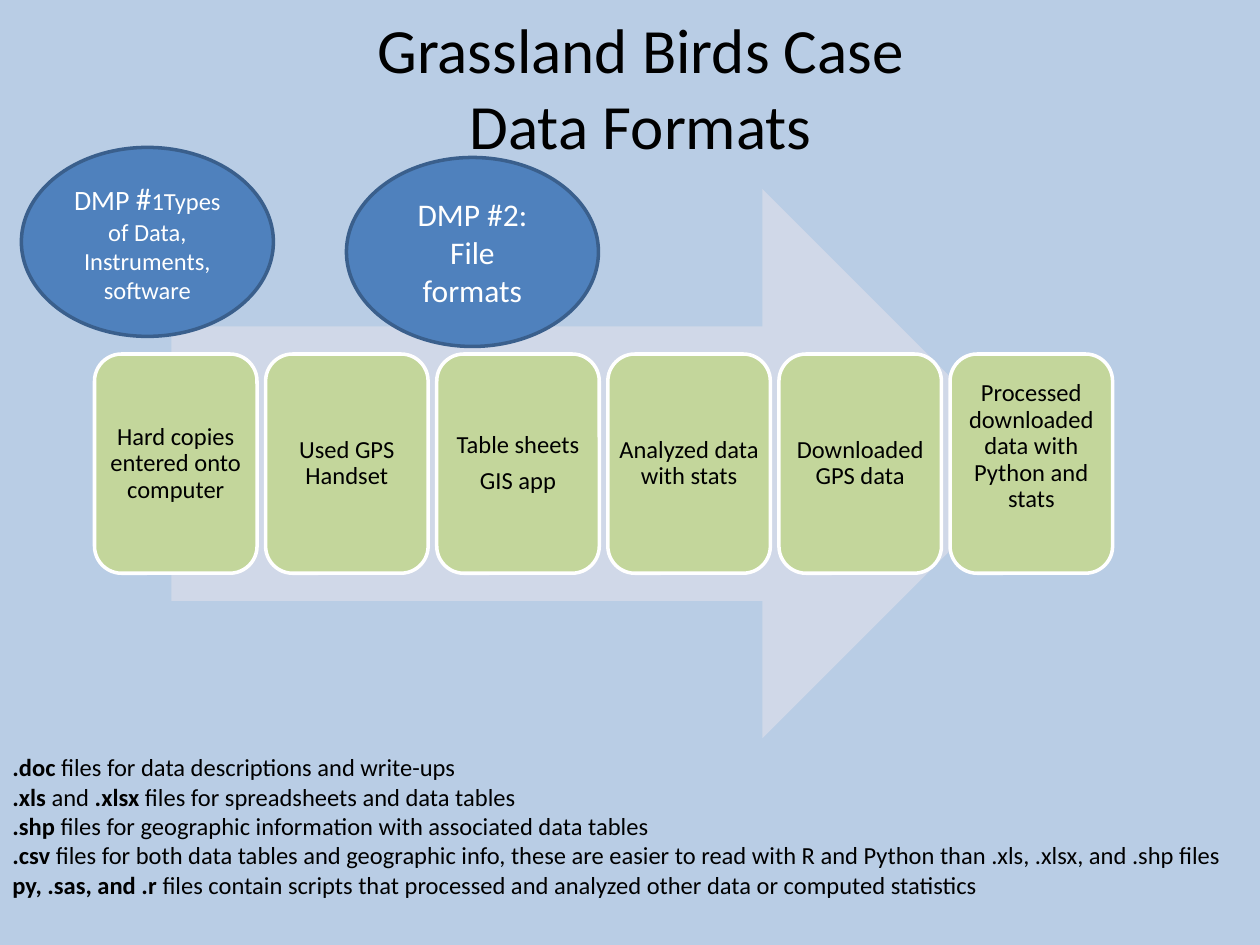
import pptx
from pptx.dml.color import RGBColor
from pptx.enum.shapes import MSO_SHAPE
from pptx.enum.text import MSO_ANCHOR, MSO_AUTO_SIZE, PP_ALIGN
from pptx.util import Inches, Pt

BACKGROUND = RGBColor(0xB9, 0xCD, 0xE5)
ARROW = RGBColor(0xD0, 0xD8, 0xE8)
GREEN = RGBColor(0xC3, 0xD6, 0x9B)
BLUE = RGBColor(0x4F, 0x81, 0xBD)
BLUE_EDGE = RGBColor(0x3A, 0x5F, 0x8C)
WHITE = RGBColor(0xFF, 0xFF, 0xFF)
BLACK = RGBColor(0, 0, 0)
FONT = "Calibri"

TITLE = "Grassland Birds Case\vData Formats"
STEPS = [
    ["Hard copies entered onto computer"],
    ["Used GPS Handset"],
    ["Table sheets", "GIS app"],
    ["Analyzed data with stats"],
    ["Downloaded GPS data"],
    ["Processed downloaded data with Python and stats"],
]
# Each paragraph is a list of (text, size, bold) runs.
FILES = [
    [(".doc ", 14, True), ("files for data descriptions and write-ups", 14, False)],
    [(".xls ", 14, True), ("and ", 14, False), (".xlsx ", 14, True),
     ("files for spreadsheets and data tables", 14, False)],
    [(".shp ", 14, True),
     ("files for geographic information with associated data tables", 14, False)],
    [(".csv ", 14, True),
     ("files for both data tables and geographic info, these are easier to read "
      "with R and Python than .xls, .xlsx, and .shp files", 14, False)],
    [("py, .sas, and .r ", 14, True),
     ("files contain scripts that processed and analyzed other data or computed "
      "statistics", 14, False)],
]
# (left, top, paragraphs)
PLAN_ITEMS = [
    (2.75, 1.25, [[("DMP #2:", 18, False)], [("File\vformats", 18, False)]]),
    (0.17, 1.17, [[("DMP ", 16, False), ("#", 18, False), ("1Types of Data,", 14, False)],
                  [("Instruments, software", 14, False)]]),
]
STEP_LEFT, STEP_RIGHT, STEP_TOP, STEP_W, STEP_H = 0.75, 8.83, 2.81, 1.29, 1.74
STEP_PITCH = (STEP_RIGHT - STEP_LEFT - STEP_W) / (len(STEPS) - 1)


def style(r, size, color, bold=False):
    r.font.name = FONT
    r.font.size = Pt(size)
    r.font.bold = bold
    r.font.color.rgb = color


def write(tf, paragraphs, color, align):
    tf.word_wrap = True
    for i, runs in enumerate(paragraphs):
        p = tf.paragraphs[0] if i == 0 else tf.add_paragraph()
        p.alignment = align
        for text, size, bold in runs:
            start = len(p.runs)
            for j, line in enumerate(text.split("\v")):
                if j:
                    p.add_line_break()
                p.add_run().text = line
            for r in p.runs[start:]:
                style(r, size, color, bold)


def add_shape(s, kind, left, top, width, height, fill, line=None):
    sp = s.shapes.add_shape(kind, Inches(left), Inches(top), Inches(width), Inches(height))
    sp.shadow.inherit = False
    sp.fill.solid()
    sp.fill.fore_color.rgb = fill
    if line is None:
        sp.line.fill.background()
    else:
        sp.line.color.rgb = line
        sp.line.width = Pt(2)
    sp.text_frame.vertical_anchor = MSO_ANCHOR.MIDDLE
    return sp


def add_step(s, index, texts):
    sp = add_shape(s, MSO_SHAPE.ROUNDED_RECTANGLE, STEP_LEFT + index * STEP_PITCH,
                   STEP_TOP, STEP_W, STEP_H, GREEN, WHITE)
    tf = sp.text_frame
    write(tf, [[(text, 14, False)] for text in texts], BLACK, PP_ALIGN.CENTER)
    # The rounded corners already inset the text by about 0.06 inches.
    tf.margin_left = tf.margin_right = tf.margin_top = tf.margin_bottom = 0
    if index == len(STEPS) - 1:
        tf.margin_bottom = Inches(0.27)
    for p in tf.paragraphs:
        p.line_spacing = 0.9
        p.space_after = Pt(5)


def main():
    prs = pptx.Presentation()
    prs.slide_width, prs.slide_height = Inches(10), Inches(7.5)
    s = prs.slides.add_slide(prs.slide_layouts[5])
    s.background.fill.solid()
    s.background.fill.fore_color.rgb = BACKGROUND

    title = s.shapes.title
    title.left, title.top = Inches(0.17), Inches(0.25)
    title.width, title.height = Inches(9.83), Inches(0.87)
    tf = title.text_frame
    tf.text = TITLE
    tf.auto_size = MSO_AUTO_SIZE.NONE
    tf.vertical_anchor = MSO_ANCHOR.MIDDLE
    tf.paragraphs[0].alignment = PP_ALIGN.CENTER
    for r in tf.paragraphs[0].runs:
        style(r, 36, BLACK)

    add_shape(s, MSO_SHAPE.RIGHT_ARROW, 1.36, 1.5, 6.87, 4.36, ARROW)
    for i, texts in enumerate(STEPS):
        add_step(s, i, texts)

    files = s.shapes.add_textbox(0, Inches(5.92), Inches(10), Inches(1.5))
    write(files.text_frame, FILES, BLACK, PP_ALIGN.LEFT)

    for left, top, paragraphs in PLAN_ITEMS:
        sp = add_shape(s, MSO_SHAPE.OVAL, left, top, 2, 1.5, BLUE, BLUE_EDGE)
        write(sp.text_frame, paragraphs, WHITE, PP_ALIGN.CENTER)

    prs.save("out.pptx")


if __name__ == "__main__":
    main()
